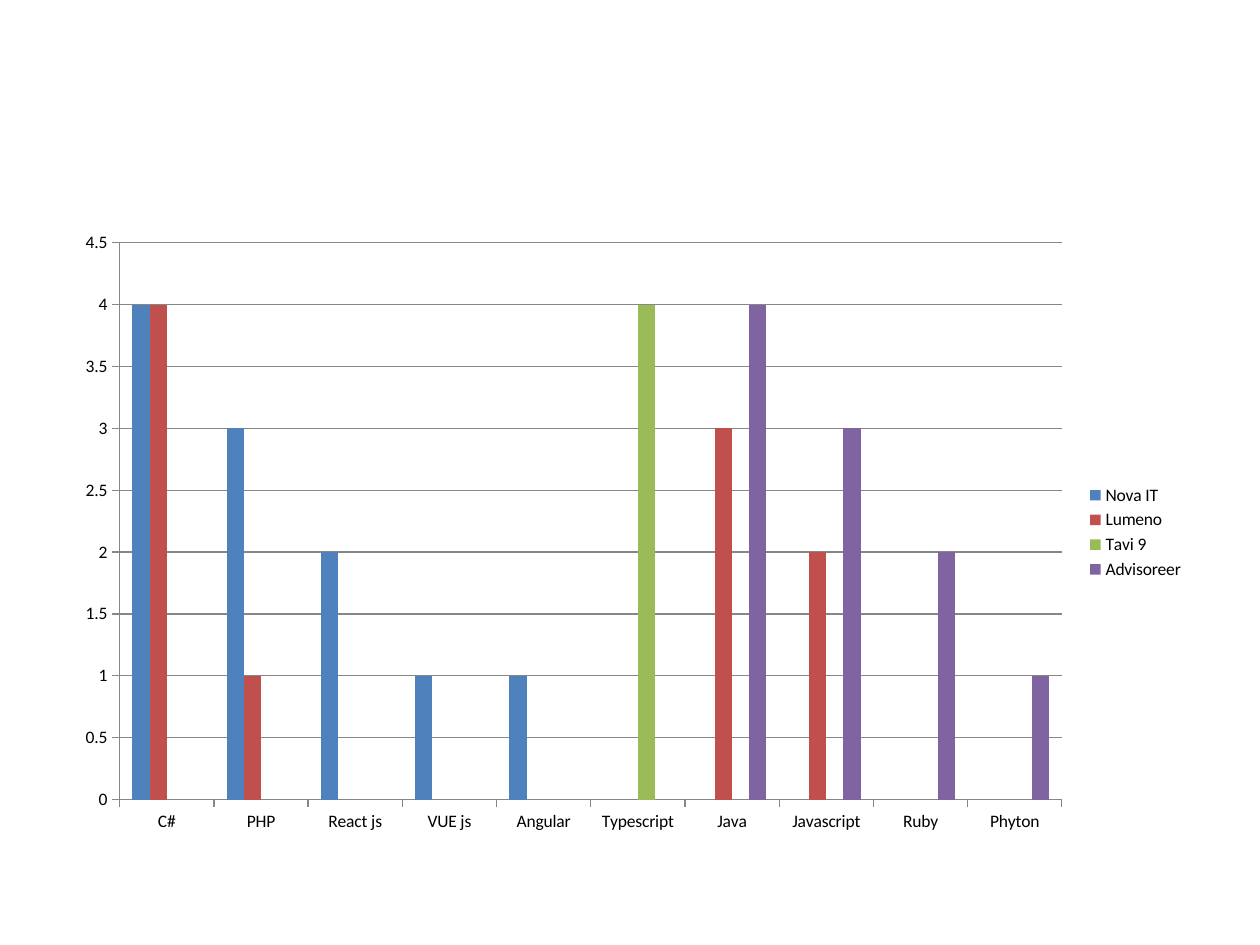
from pptx import Presentation
from pptx.chart.data import CategoryChartData
from pptx.dml.color import RGBColor
from pptx.enum.chart import XL_CHART_TYPE as ChartType
from pptx.enum.chart import XL_LEGEND_POSITION as LegendPosition
from pptx.enum.chart import XL_TICK_MARK as TickMark
from pptx.util import Pt

BLACK = RGBColor(0x00, 0x00, 0x00)
GREY = RGBColor(0x87, 0x87, 0x87)
BLUE = RGBColor(0x4F, 0x81, 0xBD)
RED = RGBColor(0xC0, 0x50, 0x4D)
GREEN = RGBColor(0x9B, 0xBB, 0x59)
PURPLE = RGBColor(0x80, 0x64, 0xA2)

LANGUAGES = ["C#", "PHP", "React js", "VUE js", "Angular", "Typescript",
             "Java", "Javascript", "Ruby", "Phyton"]
COMPANIES = [
    ("Nova IT", BLUE, {"C#": 4, "PHP": 3, "React js": 2, "VUE js": 1, "Angular": 1}),
    ("Lumeno", RED, {"C#": 4, "PHP": 1, "Java": 3, "Javascript": 2}),
    ("Tavi 9", GREEN, {"Typescript": 4}),
    ("Advisoreer", PURPLE, {"Java": 4, "Javascript": 3, "Ruby": 2, "Phyton": 1}),
]


class SlideBuilder:
    font = "Calibri"
    size = Pt(10)

    def __init__(self, slide):
        self.slide = slide

    def column_chart(self, left, top, width, height, categories, groups):
        data = CategoryChartData(number_format="General")
        data.categories = categories
        for name, _, scores in groups:
            data.add_series(name, [scores.get(category) for category in categories])
        chart = self.slide.shapes.add_chart(
            ChartType.COLUMN_CLUSTERED, Pt(left), Pt(top), Pt(width), Pt(height), data
        ).chart
        chart.has_title = False
        chart.font.name = self.font
        chart.font.size = self.size
        chart.font.color.rgb = BLACK

        columns = chart.plots[0]
        columns.vary_by_categories = False
        columns.gap_width = 150
        columns.overlap = 0
        for series, (_, color, _) in zip(columns.series, groups):
            series.invert_if_negative = False
            series.format.fill.solid()
            series.format.fill.fore_color.rgb = color

        self.style_axis(chart.category_axis)
        self.style_axis(chart.value_axis)
        scale = chart.value_axis
        scale.minimum_scale, scale.maximum_scale, scale.major_unit = 0, 4.5, 0.5
        scale.has_major_gridlines = True
        self.style_line(scale.major_gridlines.format.line)

        chart.has_legend = True
        chart.legend.position = LegendPosition.RIGHT
        chart.legend.include_in_layout = False

    def style_axis(self, axis):
        axis.major_tick_mark = TickMark.OUTSIDE
        axis.minor_tick_mark = TickMark.NONE
        self.style_line(axis.format.line)

    def style_line(self, line):
        line.color.rgb = GREY
        line.width = Pt(0.75)


def main():
    deck = Presentation()
    deck.slide_width, deck.slide_height = Pt(720), Pt(540)
    builder = SlideBuilder(deck.slides.add_slide(deck.slide_layouts[6]))
    builder.column_chart(36, 126, 648, 356.4, LANGUAGES, COMPANIES)
    deck.save("out.pptx")


if __name__ == "__main__":
    main()
